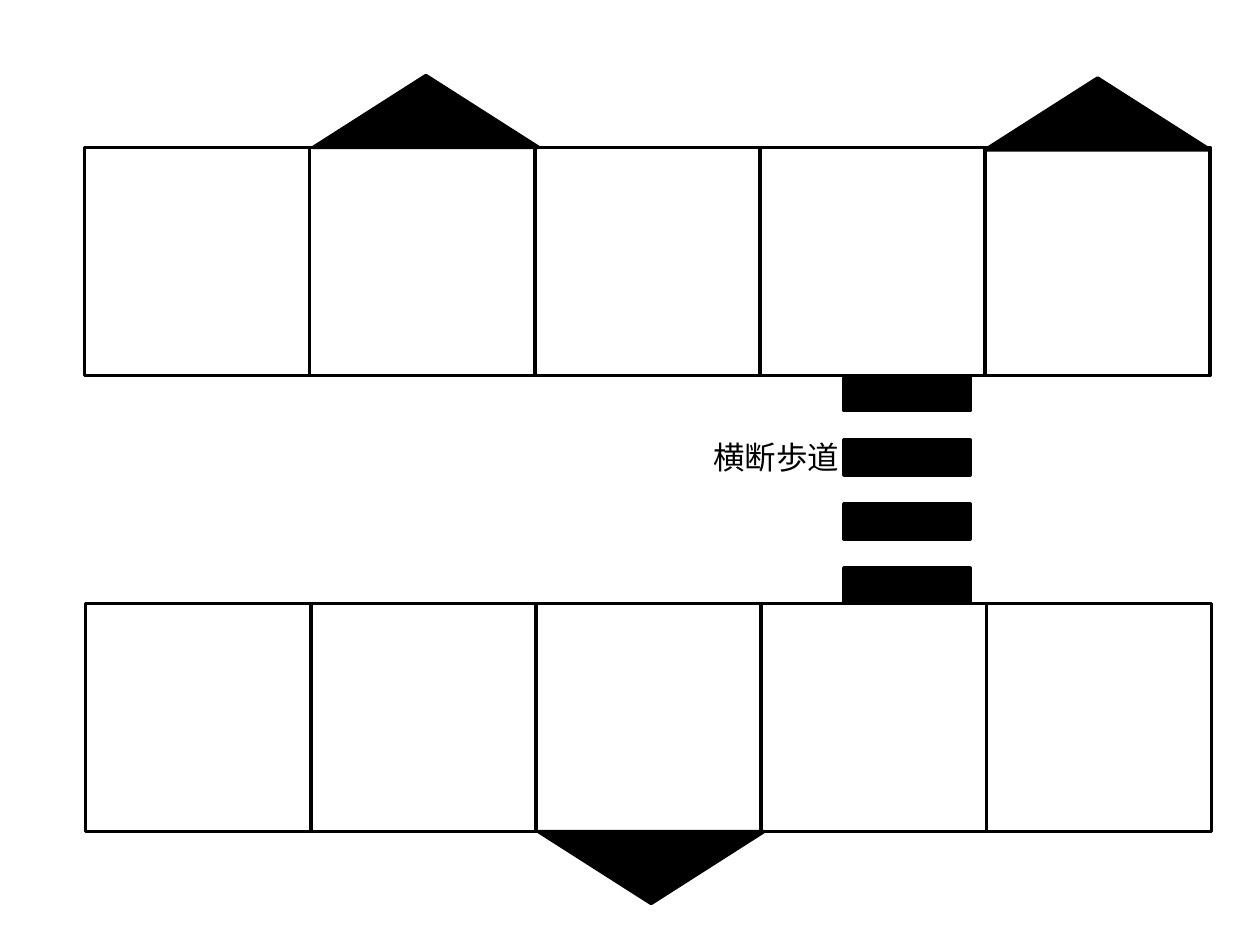
"""Draw two rows of buildings joined by a pedestrian crossing."""
from dataclasses import dataclass

from pptx import Presentation, util as u
from pptx.dml.color import RGBColor
from pptx.enum import shapes, text
from pptx.shapes.autoshape import Shape
from pptx.shapes.group import GroupShape


@dataclass(frozen=True)
class Theme:
    ink: RGBColor = RGBColor(0, 0, 0)
    paper: RGBColor = RGBColor(255, 255, 255)
    font: str = "Arial"
    label_size: float = 18
    line_width: float = 2


@dataclass(frozen=True)
class Box:
    left: float
    top: float
    width: float
    height: float

    def lengths(self) -> list[int]:
        return [u.Inches(value) for value in (self.left, self.top, self.width, self.height)]


@dataclass(frozen=True)
class BuildingRow:
    left: float
    top: float


@dataclass(frozen=True)
class Roof:
    left: float
    top: float
    rotation: float = 0


THEME = Theme()
SLIDE_WIDTH, SLIDE_HEIGHT = 10, 7.5
COLUMNS = 5
CELL_WIDTH, CELL_HEIGHT = 1.787, 1.81
ROOF_HEIGHT = 0.57
UPPER = BuildingRow(0.67, 1.17)
LOWER = BuildingRow(0.68, 4.79)
STREET_TOP = UPPER.top + CELL_HEIGHT
STRIPES = 4
STRIPE = Box(6.7, STREET_TOP, 1, 0.28)
STRIPE_STEP = (LOWER.top - STREET_TOP - STRIPE.height) / (STRIPES - 1)
ROOFS = (
    Roof(UPPER.left + CELL_WIDTH + 0.03, UPPER.top - ROOF_HEIGHT),
    Roof(LOWER.left + 2 * CELL_WIDTH + 0.02, LOWER.top + CELL_HEIGHT, 180),
    Roof(UPPER.left + 4 * CELL_WIDTH, UPPER.top - ROOF_HEIGHT + 0.02),
)
LABEL = Box(4.64, 3.43, 2.12, 0.4)


def add_figure(group: GroupShape, kind: shapes.MSO_SHAPE, box: Box, fill: RGBColor) -> Shape:
    shape = group.shapes.add_shape(kind, *box.lengths())
    shape.shadow.inherit = False
    shape.fill.solid()
    shape.fill.fore_color.rgb = fill
    shape.line.color.rgb = THEME.ink
    shape.line.width = u.Pt(THEME.line_width)
    return shape


def add_buildings(group: GroupShape, row: BuildingRow) -> None:
    for column in range(COLUMNS):
        box = Box(row.left + column * CELL_WIDTH, row.top, CELL_WIDTH, CELL_HEIGHT)
        add_figure(group, shapes.MSO_SHAPE.RECTANGLE, box, THEME.paper)


def add_crossing(group: GroupShape) -> None:
    for index in range(STRIPES):
        box = Box(STRIPE.left, STRIPE.top + index * STRIPE_STEP, STRIPE.width, STRIPE.height)
        add_figure(group, shapes.MSO_SHAPE.RECTANGLE, box, THEME.ink)


def add_roof(group: GroupShape, roof: Roof) -> None:
    box = Box(roof.left, roof.top, CELL_WIDTH, ROOF_HEIGHT)
    shape = add_figure(group, shapes.MSO_SHAPE.ISOSCELES_TRIANGLE, box, THEME.ink)
    shape.rotation = roof.rotation


def add_label(group: GroupShape, caption: str, box: Box) -> None:
    text_frame = group.shapes.add_textbox(*box.lengths()).text_frame
    text_frame.word_wrap = True
    text_frame.auto_size = text.MSO_AUTO_SIZE.SHAPE_TO_FIT_TEXT
    text_frame.text = caption
    paragraph = text_frame.paragraphs[0]
    paragraph.alignment = text.PP_ALIGN.RIGHT
    font = paragraph.runs[0].font
    font.name = THEME.font
    font.size = u.Pt(THEME.label_size)
    font.color.rgb = THEME.ink


def main() -> None:
    presentation = Presentation()
    presentation.slide_width = u.Inches(SLIDE_WIDTH)
    presentation.slide_height = u.Inches(SLIDE_HEIGHT)
    slide = presentation.slides.add_slide(presentation.slide_layouts[6])
    street = slide.shapes.add_group_shape()
    for row in (UPPER, LOWER):
        add_buildings(street, row)
    add_crossing(street)
    for roof in ROOFS:
        add_roof(street, roof)
    add_label(street, "横断歩道", LABEL)
    presentation.save("out.pptx")


if __name__ == "__main__":
    main()
